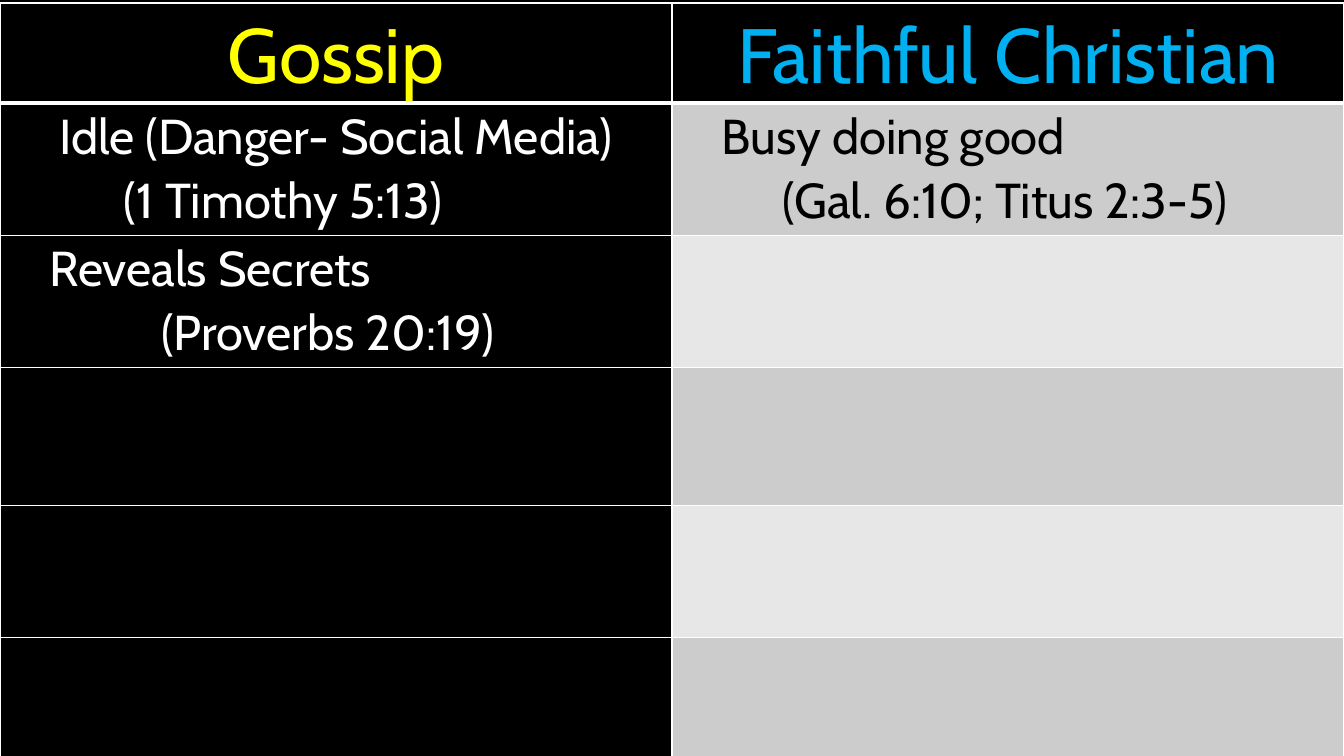
from dataclasses import dataclass

from lxml.etree import SubElement
from pptx import Presentation
from pptx.dml.color import RGBColor
from pptx.enum.text import PP_ALIGN as Align
from pptx.oxml.ns import qn
from pptx.util import Inches, Pt

BLACK = RGBColor(0x00, 0x00, 0x00)
WHITE = RGBColor(0xFF, 0xFF, 0xFF)
YELLOW = RGBColor(0xFF, 0xFF, 0x00)
BLUE = RGBColor(0x00, 0xB0, 0xF0)
GREY = RGBColor(0xCC, 0xCC, 0xCC)
PALE_GREY = RGBColor(0xE7, 0xE7, 0xE7)

FONT = "Cabin"
HEADING_SIZE, BODY_SIZE = 55, 35
THIN, THICK = 1, 3
SLIDE_WIDTH, SLIDE_HEIGHT = Inches(13.33), Inches(7.5)
COLUMN_COUNT = 2
TABLE_TOP = Inches(0.03)
ROW_HEIGHTS = [Inches(height) for height in (0.96, 1.31, 1.31, 1.37, 1.31, 1.41)]


@dataclass(frozen=True)
class Line:
    text: str
    indent: float | None = None  # inches; None centres the line


@dataclass(frozen=True)
class Entry:
    row: int
    column: int
    color: RGBColor
    lines: tuple[Line, ...]


ENTRIES = (
    Entry(0, 0, YELLOW, (Line("Gossip"),)),
    Entry(0, 1, BLUE, (Line("Faithful Christian"),)),
    Entry(1, 0, WHITE, (Line("Idle (Danger- Social Media)"), Line("(1 Timothy 5:13)", 1.16))),
    Entry(1, 1, BLACK, (Line("Busy doing good", 0.42), Line("(Gal. 6:10; Titus 2:3-5)", 1.03))),
    Entry(2, 0, WHITE, (Line("Reveals Secrets", 0.42), Line("(Proverbs 20:19)", 1.53))),
)


def cell_color(row: int, column: int) -> RGBColor:
    """Black heading and left column; alternating greys on the right."""
    if row == 0 or column == 0:
        return BLACK
    return GREY if row % 2 else PALE_GREY


def add_borders(cell, row: int) -> None:
    widths = {
        "lnL": THIN,
        "lnR": THIN,
        "lnT": THICK if row == 1 else THIN,
        "lnB": THICK if row == 0 else THIN,
    }
    properties = cell._tc.get_or_add_tcPr()
    for position, (tag, width) in enumerate(widths.items()):
        border = SubElement(properties, qn(f"a:{tag}"), w=str(Pt(width)))
        fill = SubElement(border, qn("a:solidFill"))
        SubElement(fill, qn("a:srgbClr"), val=str(WHITE))
        properties.insert(position, border)


def format_cell(cell, row: int, column: int) -> None:
    cell.margin_left = cell.margin_right = Inches(0.07)
    cell.margin_top = cell.margin_bottom = 0
    cell.fill.solid()
    cell.fill.fore_color.rgb = cell_color(row, column)
    add_borders(cell, row)


def write_entry(cell, entry: Entry) -> None:
    frame = cell.text_frame
    for index, line in enumerate(entry.lines):
        para = frame.add_paragraph() if index else frame.paragraphs[0]
        para.line_spacing = 1.07
        if line.indent is None:
            para.alignment = Align.CENTER
        else:
            para.alignment = Align.LEFT
            para._p.get_or_add_pPr().set("marL", str(Inches(line.indent)))
        span = para.add_run()
        span.text = line.text
        span.font.name = FONT
        span.font.size = Pt(BODY_SIZE if entry.row else HEADING_SIZE)
        span.font.bold = False
        span.font.color.rgb = entry.color


def main() -> None:
    deck = Presentation()
    deck.slide_width, deck.slide_height = SLIDE_WIDTH, SLIDE_HEIGHT
    page = deck.slides.add_slide(deck.slide_layouts[6])
    page.background.fill.solid()
    page.background.fill.fore_color.rgb = BLACK

    # Comparison grid
    table = page.shapes.add_table(
        len(ROW_HEIGHTS), COLUMN_COUNT, 0, TABLE_TOP, SLIDE_WIDTH, sum(ROW_HEIGHTS)
    ).table
    table.horz_banding = False
    for column in table.columns:
        column.width = SLIDE_WIDTH // COLUMN_COUNT
    for row, height in enumerate(ROW_HEIGHTS):
        table.rows[row].height = height
        for column in range(COLUMN_COUNT):
            format_cell(table.cell(row, column), row, column)

    # Headings and points
    for entry in ENTRIES:
        write_entry(table.cell(entry.row, entry.column), entry)

    deck.save("out.pptx")


if __name__ == "__main__":
    main()
